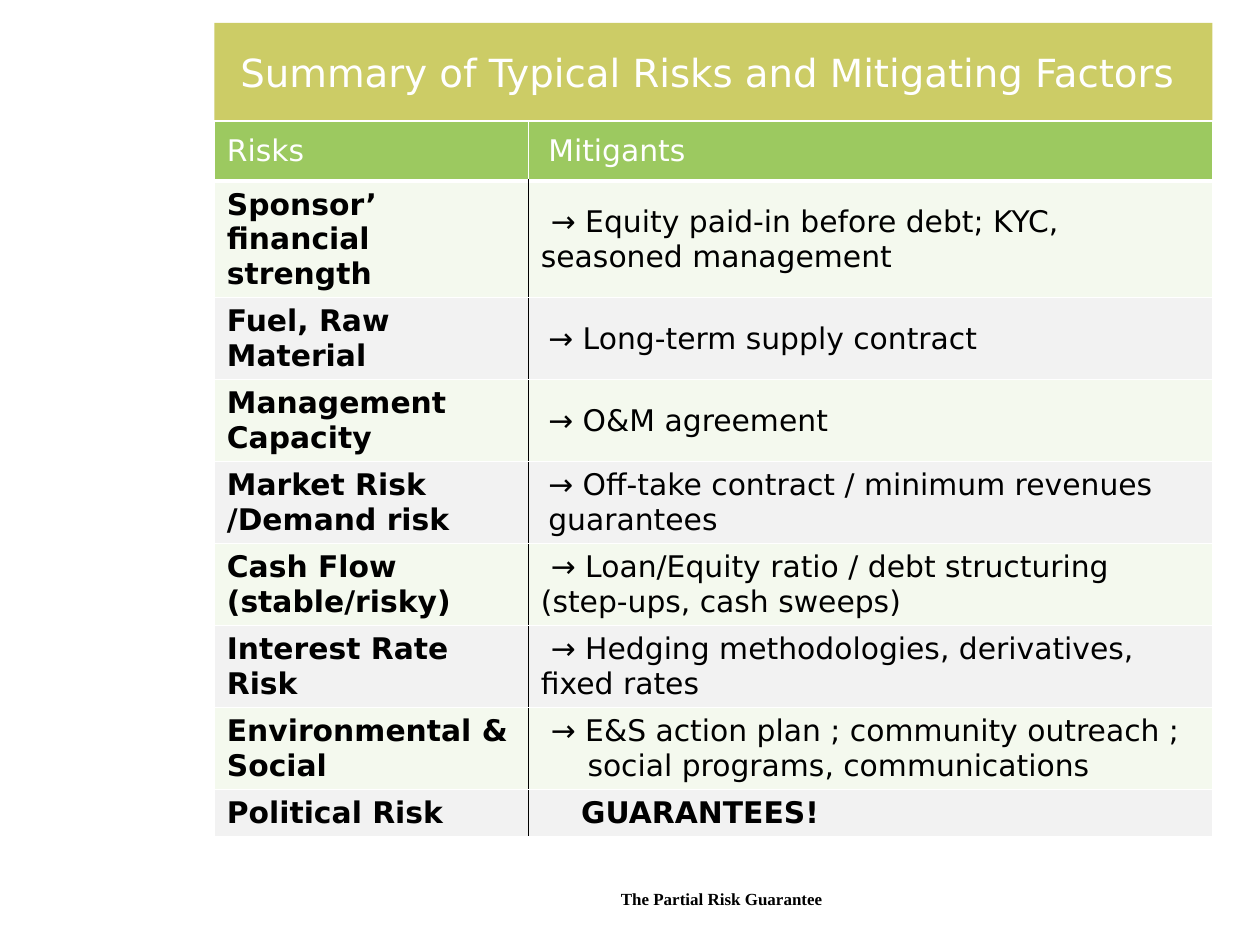
from dataclasses import dataclass

from lxml.etree import SubElement
from pptx import Presentation
from pptx.dml.color import RGBColor as Rgb
from pptx.enum.text import MSO_ANCHOR as Anchor, MSO_AUTO_SIZE as AutoSize, PP_ALIGN as Align
from pptx.oxml.ns import qn
from pptx.util import Cm, Pt


@dataclass(frozen=True)
class Theme:
    white: str = "FFFFFF"
    black: str = "000000"
    title_fill: str = "CCCC66"
    header_fill: str = "9CC960"
    bands: tuple = ("F4F9EE", "F2F2F2")
    sans: str = "DejaVu Sans"
    serif: str = "Times New Roman"
    title_size: float = 22.1
    table_size: float = 17
    footer_size: float = 9.7


THEME = Theme()
LEFT, WIDTH = 4.32, 20.12
COLUMNS = (6.33, 13.79)
ROW_HEIGHTS = (1.21, 2.3, *[1.6] * 6, 0.92)

# Indents of the mitigants: (left margin, first line relative to it)
FLAT, BLOCK, HANGING, DEEP = (0.15, 0), (0, 0.2), (0.94, -0.74), (0.81, 0)
RISKS = [
    ("Sponsor’ financial strength", "→ Equity paid-in before debt; KYC, seasoned management", BLOCK),
    ("Fuel, Raw Material", "→ Long-term supply contract", FLAT),
    ("Management Capacity", "→ O&M agreement", FLAT),
    ("Market Risk /Demand risk", "→ Off-take contract / minimum revenues guarantees", FLAT),
    ("Cash Flow (stable/risky)", "→ Loan/Equity ratio / debt structuring (step-ups, cash sweeps)", BLOCK),
    ("Interest Rate Risk", "→ Hedging methodologies, derivatives, fixed rates", BLOCK),
    ("Environmental & Social", "→ E&S action plan ; community outreach ; social programs, communications", HANGING),
    ("Political Risk", "GUARANTEES!", DEEP),
]


def write_text(frame, text, *, size, color=THEME.black, font=THEME.sans,
               bold=False, align=Align.LEFT, indent=(0, 0)):
    para = frame.paragraphs[0]
    para.alignment = align
    if any(indent):
        properties = para._p.get_or_add_pPr()
        properties.set("marL", str(Cm(indent[0])))
        properties.set("indent", str(Cm(indent[1])))
    span = para.add_run()
    span.text = text
    span.font.name = font
    span.font.size = Pt(size)
    span.font.bold = bold
    span.font.color.rgb = Rgb.from_string(color)


def set_fill(target, color):
    target.fill.solid()
    target.fill.fore_color.rgb = Rgb.from_string(color)


def set_borders(cell, left, right, bottom_width):
    properties = cell._tc.get_or_add_tcPr()
    edges = (("L", left, 1), ("R", right, 1),
             ("T", THEME.white, 1), ("B", THEME.white, bottom_width))
    for side, color, width in edges:
        line = SubElement(properties, qn(f"a:ln{side}"), w=str(Pt(width)))
        SubElement(SubElement(line, qn("a:solidFill")), qn("a:srgbClr"), val=color)


def format_cell(cell, text, *, fill, borders, bottom_width=1, **text_format):
    set_borders(cell, *borders, bottom_width)
    set_fill(cell, fill)
    cell.vertical_anchor = Anchor.MIDDLE
    write_text(cell.text_frame, text, size=THEME.table_size, **text_format)


def add_title(page, text):
    title = page.shapes.title
    title.left, title.top, title.width, title.height = Cm(LEFT), Cm(0.46), Cm(WIDTH), Cm(1.98)
    set_fill(title, THEME.title_fill)
    frame = title.text_frame
    frame.word_wrap = True
    frame.auto_size = AutoSize.NONE
    frame.vertical_anchor = Anchor.MIDDLE
    frame.margin_left, frame.margin_right = Cm(0.25), Cm(0.5)
    write_text(frame, text, size=THEME.title_size, color=THEME.white, align=Align.CENTER)


def add_risk_table(page):
    table = page.shapes.add_table(len(ROW_HEIGHTS), len(COLUMNS), Cm(LEFT), Cm(2.44),
                                  Cm(WIDTH), Cm(sum(ROW_HEIGHTS))).table
    for column, width in zip(table.columns, COLUMNS):
        column.width = Cm(width)
    for row, height in zip(table.rows, ROW_HEIGHTS):
        row.height = Cm(height)

    # Header row
    for index, (text, indent) in enumerate((("Risks", (0, 0)), ("Mitigants", FLAT))):
        format_cell(table.cell(0, index), text, fill=THEME.header_fill, indent=indent,
                    borders=(THEME.white, THEME.white), bottom_width=3, color=THEME.white)

    # Banded body rows with a black rule between the columns
    for number, (risk, mitigant, indent) in enumerate(RISKS, start=1):
        fill = THEME.bands[(number - 1) % 2]
        format_cell(table.cell(number, 0), risk, fill=fill, bold=True,
                    borders=(THEME.white, THEME.black))
        format_cell(table.cell(number, 1), mitigant, fill=fill, indent=indent,
                    bold=number == len(RISKS), borders=(THEME.black, THEME.white))


def add_footer(page, text):
    box = page.shapes.add_textbox(Cm(9.55), Cm(17.78), Cm(10), Cm(0.69))
    box.text_frame.word_wrap = True
    write_text(box.text_frame, text, size=THEME.footer_size, font=THEME.serif,
               bold=True, align=Align.CENTER)


def main():
    deck = Presentation()
    deck.slide_width, deck.slide_height = Cm(25.4), Cm(19.05)
    page = deck.slides.add_slide(deck.slide_layouts[5])
    add_risk_table(page)
    add_title(page, "Summary of Typical Risks and Mitigating Factors")
    add_footer(page, "The Partial Risk Guarantee")
    deck.save("out.pptx")


if __name__ == "__main__":
    main()
